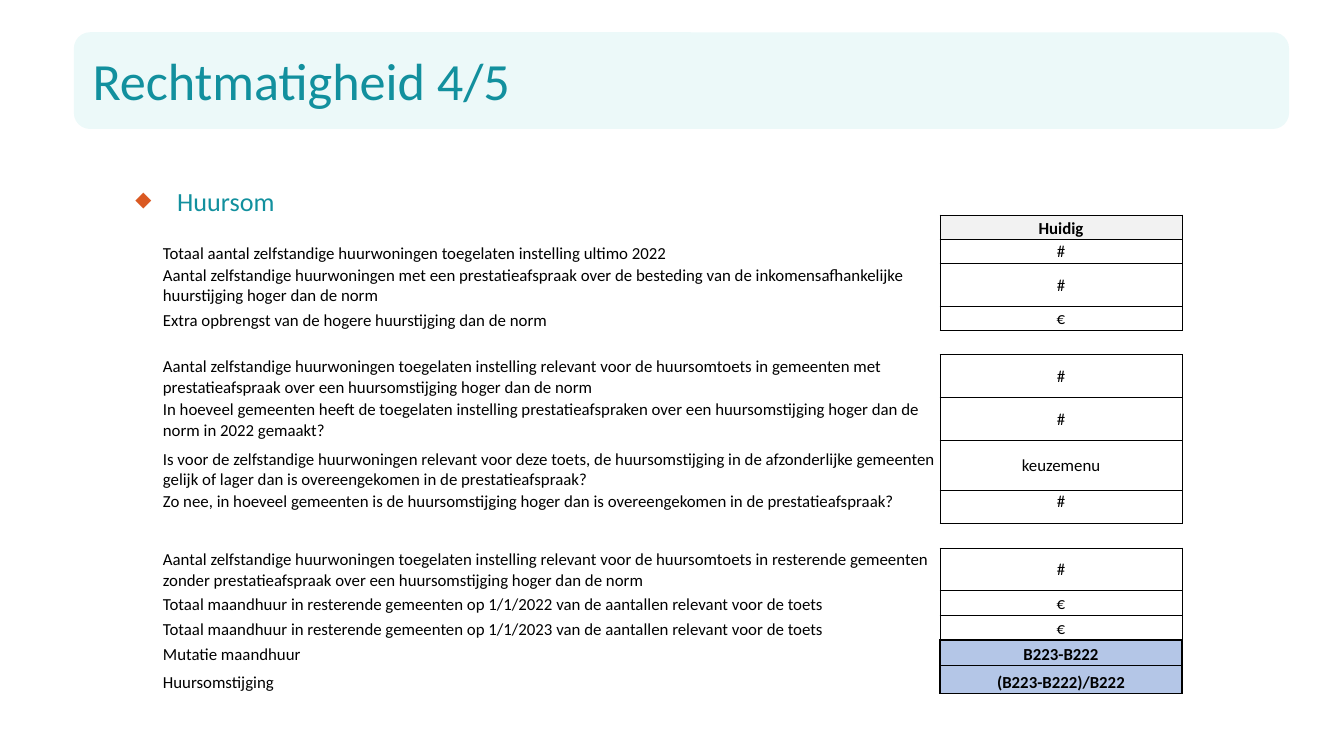
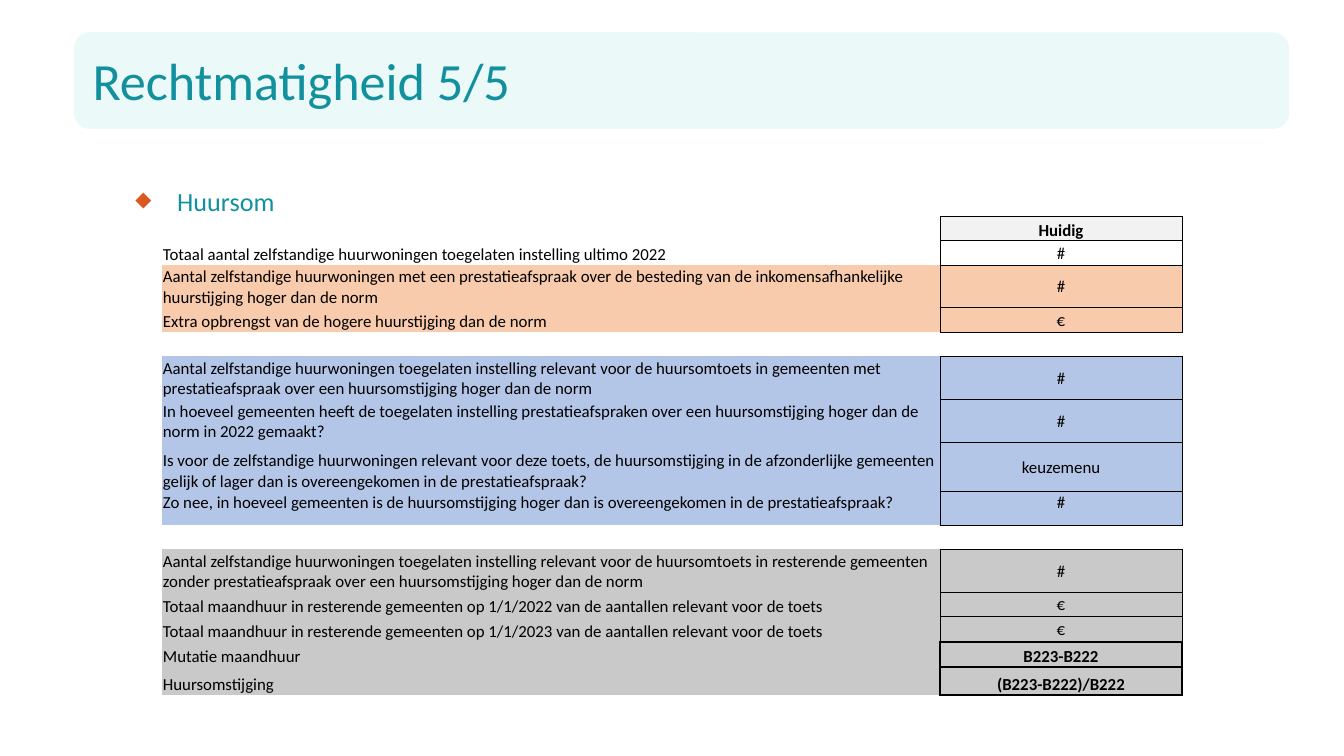
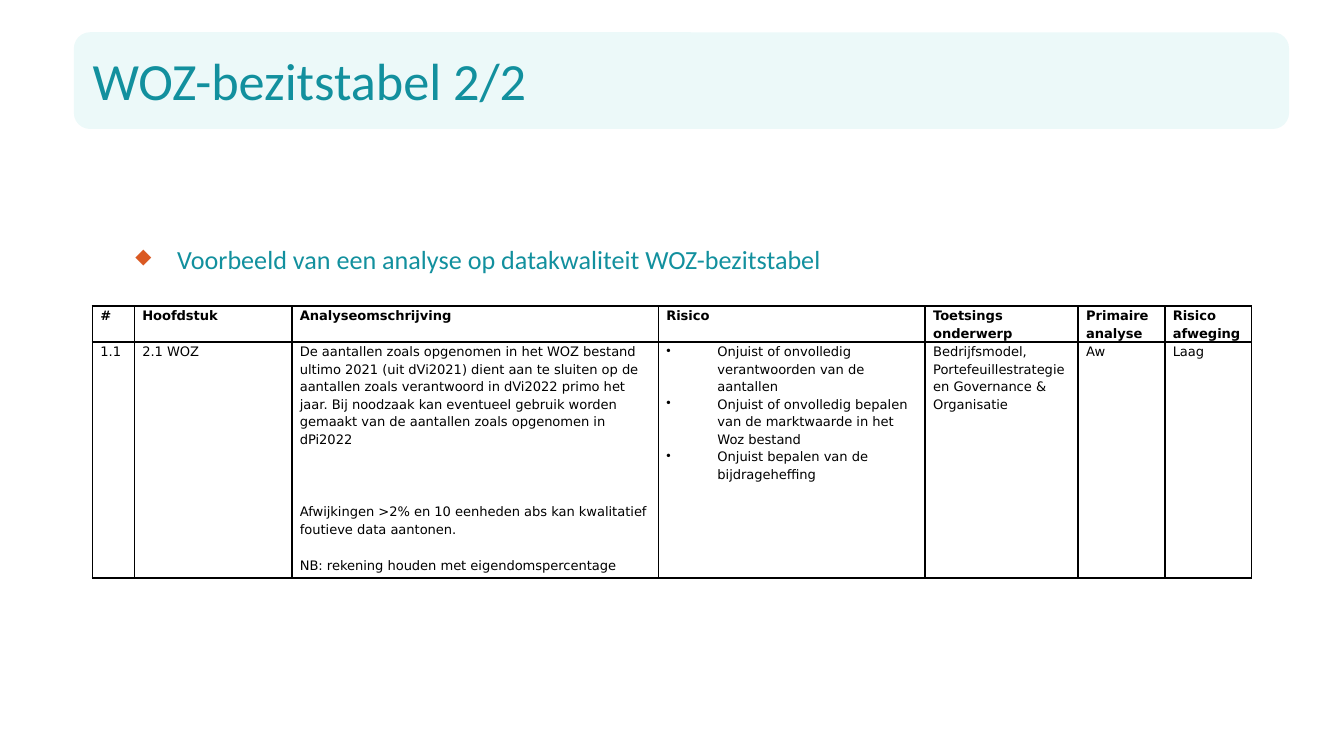
from lxml import etree
from pptx import Presentation
from pptx.dml.color import RGBColor
from pptx.enum.shapes import MSO_SHAPE
from pptx.enum.text import MSO_ANCHOR, PP_ALIGN
from pptx.oxml.ns import qn
from pptx.util import Pt

ROUNDED = MSO_SHAPE.ROUNDED_RECTANGLE
TOP, MIDDLE, BOTTOM = MSO_ANCHOR.TOP, MSO_ANCHOR.MIDDLE, MSO_ANCHOR.BOTTOM
LEFT, CENTER = PP_ALIGN.LEFT, PP_ALIGN.CENTER

# Colours and fonts
AQUA = RGBColor(0x46, 0xC5, 0xC8)
TEAL = RGBColor(0x12, 0x90, 0x9E)
ORANGE = RGBColor(0xDA, 0x59, 0x22)
BLACK = RGBColor(0x00, 0x00, 0x00)
WHITE = RGBColor(0xFF, 0xFF, 0xFF)
PALE_GREY = RGBColor(0xF2, 0xF2, 0xF2)
GREY = RGBColor(0xC9, 0xC9, 0xC9)
PEACH = RGBColor(0xF8, 0xCB, 0xAD)
BLUE = RGBColor(0xB4, 0xC6, 0xE7)
FONT, ANALYSIS_FONT = "Calibri", "DejaVu Sans"
PLAIN_TABLE_STYLE = "{2D5ABB26-0587-4C30-8999-92F81FD0307C}"
THIN, THICK = 0.5, 1

# Huursom rows: section, row height, label, value
HUURSOM_ROWS = [
    ("head", 13, "", "Huidig"),
    ("total", 13, "Totaal aantal zelfstandige huurwoningen toegelaten instelling ultimo 2022", "#"),
    ("extra", 23, "Aantal zelfstandige huurwoningen met een prestatieafspraak over de besteding van de "
                  "inkomensafhankelijke huurstijging hoger dan de norm", "#"),
    ("extra", 13, "Extra opbrengst van de hogere huurstijging dan de norm", "€"),
    ("gap", 13, "", ""),
    ("agreed", 23, "Aantal zelfstandige huurwoningen toegelaten instelling relevant voor de huursomtoets in "
                   "gemeenten met prestatieafspraak over een huursomstijging hoger dan de norm", "#"),
    ("agreed", 23, "In hoeveel gemeenten heeft de toegelaten instelling prestatieafspraken over een "
                   "huursomstijging hoger dan de norm in 2022 gemaakt?", "#"),
    ("agreed", 26.5, "Is voor de zelfstandige huurwoningen relevant voor deze toets, de huursomstijging in de "
                     "afzonderlijke gemeenten gelijk of lager dan is overeengekomen in de "
                     "prestatieafspraak?", "keuzemenu"),
    ("follow-up", 18, "Zo nee, in hoeveel gemeenten is de huursomstijging hoger dan is overeengekomen in de "
                      "prestatieafspraak?", "#"),
    ("gap", 13, "", ""),
    ("rest", 23, "Aantal zelfstandige huurwoningen toegelaten instelling relevant voor de huursomtoets in "
                 "resterende gemeenten zonder prestatieafspraak over een huursomstijging hoger dan de norm", "#"),
    ("rest", 13, "Totaal maandhuur in resterende gemeenten op 1/1/2022 van de aantallen relevant "
                 "voor de toets", "€"),
    ("rest", 13.5, "Totaal maandhuur in resterende gemeenten op 1/1/2023 van de aantallen relevant "
                   "voor de toets", "€"),
    ("result", 13.5, "Mutatie maandhuur", "B223-B222"),
    ("result", 15, "Huursomstijging", "(B223-B222)/B222"),
]
SECTION_FILLS = {"extra": PEACH, "agreed": BLUE, "follow-up": BLUE, "rest": GREY, "result": GREY}

# Analysis table: column width, heading, paragraphs
ANALYSIS_COLUMNS = [
    (22.5, "#", ["1.1"]),
    (84.4, "Hoofdstuk", ["2.1 WOZ"]),
    (196.3, "Analyseomschrijving", [
        "De aantallen zoals opgenomen in het WOZ bestand ultimo 2021 (uit dVi2021) dient aan te sluiten op de "
        "aantallen zoals verantwoord in dVi2022 primo het jaar. Bij noodzaak kan eventueel gebruik worden "
        "gemaakt van de aantallen zoals opgenomen in dPi2022",
        "Afwijkingen >2% en 10 eenheden abs kan kwalitatief foutieve data aantonen.",
        "NB: rekening houden met eigendomspercentage"]),
    (143, "Risico", [
        "Onjuist of onvolledig verantwoorden van de aantallen",
        "Onjuist of onvolledig bepalen van de marktwaarde in het Woz bestand",
        "Onjuist bepalen van de bijdrageheffing"]),
    (82, "Toetsings onderwerp", ["Bedrijfsmodel, Portefeuillestrategie en Governance & Organisatie"]),
    (46.4, "Primaire analyse", ["Aw"]),
    (46.4, "Risico afweging", ["Laag"]),
]


# Text
def add_span(para, text, size, color, font=FONT, bold=False):
    span = para.add_run()
    span.text = text
    span.font.size = Pt(size)
    span.font.name = font
    span.font.bold = bold
    span.font.color.rgb = color


def add_bullet(para, char, indent, color=None, percent=100):
    props = para._p.get_or_add_pPr()
    props.set("marL", str(Pt(indent)))
    props.set("indent", str(-Pt(indent)))
    if color is not None:
        holder = etree.SubElement(props, qn("a:buClr"))
        etree.SubElement(holder, qn("a:srgbClr"), val=str(color))
    etree.SubElement(props, qn("a:buSzPct"), val=str(percent * 1000))
    etree.SubElement(props, qn("a:buChar"), char=char)


def add_text_box(page, left, top, width, height):
    box = page.shapes.add_textbox(Pt(left), Pt(top), Pt(width), Pt(height))
    box.text_frame.word_wrap = True
    return box.text_frame.paragraphs[0]


# Shared slide parts
def add_page(deck, title, subtitle, subtitle_top):
    page = deck.slides.add_slide(deck.slide_layouts[6])
    band = page.shapes.add_shape(ROUNDED, Pt(39.6), Pt(17.3), Pt(651), Pt(51.8))
    band.shadow.inherit = False
    band.line.fill.background()
    band.fill.solid()
    band.fill.fore_color.rgb = AQUA
    color = band._element.spPr.find(qn("a:solidFill"))[0]
    etree.SubElement(color, qn("a:alpha"), val="10000")

    add_span(add_text_box(page, 42.5, 22.3, 635, 63.4), title, 28, TEAL)
    para = add_text_box(page, 65.5, subtitle_top, 452, 232)
    add_bullet(para, "◆", 22.3, ORANGE, 80)
    para.line_spacing = Pt(22)
    add_span(para, subtitle, 14, TEAL)
    return page


# Tables
def add_plain_table(page, left, top, widths, heights):
    frame = page.shapes.add_table(len(heights), len(widths), Pt(left), Pt(top),
                                  Pt(sum(widths)), Pt(sum(heights)))
    table = frame.table
    table.first_row = table.horz_banding = False
    table._tbl.tblPr.find(qn("a:tableStyleId")).text = PLAIN_TABLE_STYLE
    for column, width in zip(table.columns, widths):
        column.width = Pt(width)
    for row, height in zip(table.rows, heights):
        row.height = Pt(height)
    return table


def style_cell(cell, edges, fill=None, anchor=TOP, insets=(0.7, 0.7, 0.7, 0)):
    """Edges maps sides, in the order L, R, T, B, to line widths."""
    cell.margin_left, cell.margin_top, cell.margin_right, cell.margin_bottom = map(Pt, insets)
    cell.vertical_anchor = anchor
    props = cell._tc.get_or_add_tcPr()
    for side, width in edges.items():
        line = etree.SubElement(props, qn("a:ln" + side), w=str(Pt(width)))
        solid = etree.SubElement(line, qn("a:solidFill"))
        etree.SubElement(solid, qn("a:srgbClr"), val=str(BLACK))
    if fill is None:
        cell.fill.background()
    else:
        cell.fill.solid()
        cell.fill.fore_color.rgb = fill


def fill_huursom_cell(cell, text, align=LEFT, bold=False):
    para = cell.text_frame.paragraphs[0]
    para.alignment = align
    if text:
        add_span(para, text, 9, BLACK, bold=bold)
    else:
        etree.SubElement(para._p, qn("a:endParaRPr"), sz="900")


def add_huursom_table(page, top, label_fills, value_fills):
    heights = [height for _, height, _, _ in HUURSOM_ROWS]
    table = add_plain_table(page, 86.6, top, [417, 129.6], heights)
    for index, (section, _, label, value) in enumerate(HUURSOM_ROWS):
        label_cell, value_cell = table.cell(index, 0), table.cell(index, 1)
        strong = section in ("head", "result")
        weight = THICK if section == "result" else THIN
        label_edges, value_edges = {"R": weight}, dict.fromkeys("LRTB", weight)
        if section == "gap":
            label_edges, value_edges = {}, dict.fromkeys("TB", THIN)
        elif index + 1 < len(HUURSOM_ROWS) and HUURSOM_ROWS[index + 1][0] == "result":
            value_edges["B"] = THICK
        label_anchor, value_anchor = BOTTOM, BOTTOM if strong else MIDDLE
        if section == "follow-up":
            label_anchor = value_anchor = TOP
        style_cell(label_cell, label_edges, label_fills.get(section), label_anchor)
        style_cell(value_cell, value_edges, value_fills.get(section, WHITE), value_anchor)
        fill_huursom_cell(label_cell, label)
        fill_huursom_cell(value_cell, value, CENTER, strong)


def fill_analysis_cell(cell, texts, bold=False, bulleted=False):
    style_cell(cell, dict.fromkeys("LRTB", THICK), insets=(4.3, 0, 4.3, 0))
    for index, text in enumerate(texts):
        para = cell.text_frame.add_paragraph() if index else cell.text_frame.paragraphs[0]
        if bulleted:
            add_bullet(para, "•", 27.4)
        last = index == len(texts) - 1
        para.line_spacing = 1.15
        para.space_after = Pt(0 if bulleted and not last else 10)
        add_span(para, text, 7, BLACK, ANALYSIS_FONT, bold)


def add_analysis_table(page):
    widths = [width for width, _, _ in ANALYSIS_COLUMNS]
    table = add_plain_table(page, 49.5, 164, widths, [19.3, 126.4])
    for index, (_, heading, texts) in enumerate(ANALYSIS_COLUMNS):
        fill_analysis_cell(table.cell(0, index), [heading], bold=True)
        fill_analysis_cell(table.cell(1, index), texts, bulleted=heading == "Risico")
    # Wider gap below the description
    table.cell(1, 2).text_frame.paragraphs[0].space_after = Pt(29.5)


def main():
    deck = Presentation()
    deck.slide_width, deck.slide_height = Pt(720), Pt(405)

    page = add_page(deck, "Rechtmatigheid 4/5", "Huursom", 90.7)
    add_huursom_table(page, 115.2, {}, {"head": PALE_GREY, "result": BLUE})

    page = add_page(deck, "Rechtmatigheid 5/5", "Huursom", 90.7)
    add_huursom_table(page, 116, SECTION_FILLS, {"head": PALE_GREY, **SECTION_FILLS})

    page = add_page(deck, "WOZ-bezitstabel 2/2",
                    "Voorbeeld van een analyse op datakwaliteit WOZ-bezitstabel", 121.7)
    add_analysis_table(page)

    deck.save("out.pptx")


if __name__ == "__main__":
    main()
